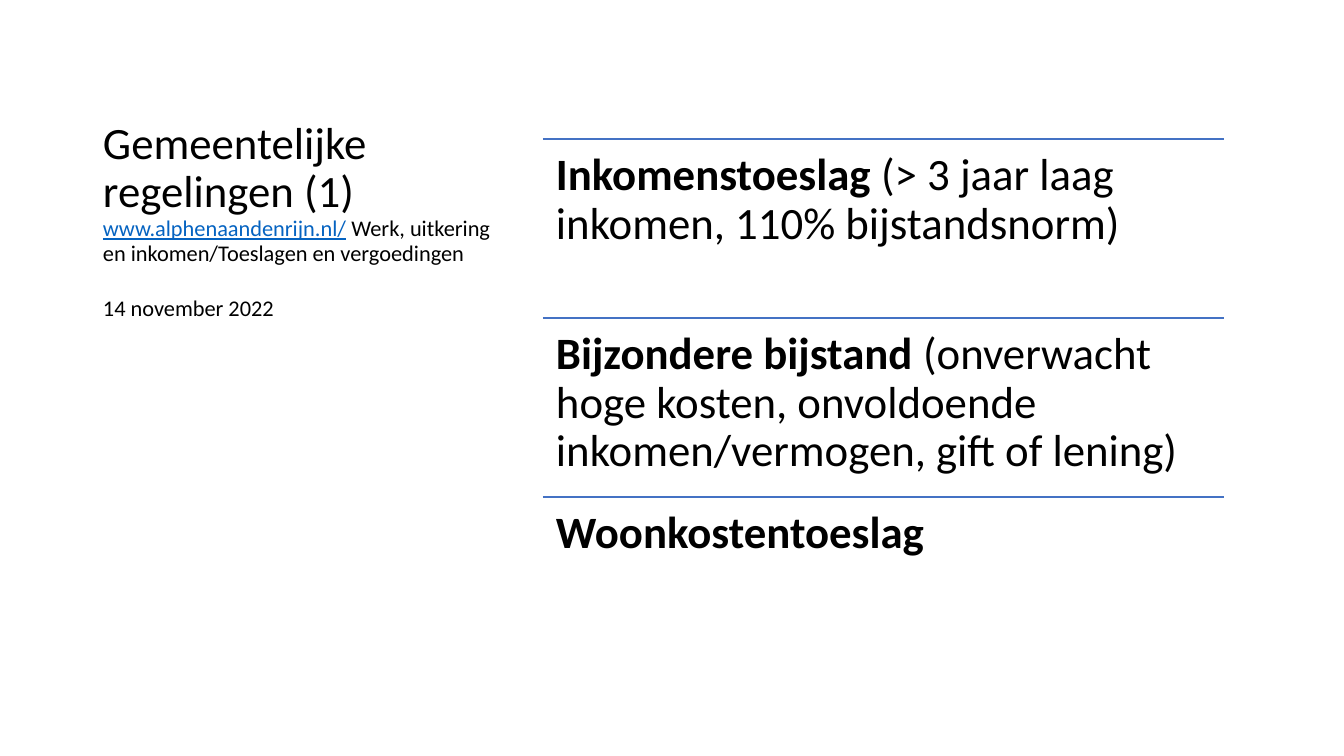
from pptx import Presentation
from pptx.dml.color import RGBColor
from pptx.enum.shapes import MSO_CONNECTOR
from pptx.enum.text import MSO_ANCHOR
from pptx.oxml.ns import qn
from pptx.util import Pt
from lxml import etree

STRAIGHT = MSO_CONNECTOR.STRAIGHT
TOP, BOTTOM = MSO_ANCHOR.TOP, MSO_ANCHOR.BOTTOM

BLACK = RGBColor(0x00, 0x00, 0x00)
BLUE = RGBColor(0x44, 0x72, 0xC4)
LINK = RGBColor(0x05, 0x63, 0xC1)
FONT = "Calibri"
SCALE = 914400 / 100.8

LEFT, WIDTH = 93, 433
ROW_X, ROW_Y, ROW_W, ROW_H = 543, 139, 681, 179
ROWS = [
    ("Inkomenstoeslag", " (> 3 jaar laag inkomen, 110% bijstandsnorm)"),
    ("Bijzondere bijstand ",
     "(onverwacht hoge kosten, onvoldoende inkomen/vermogen, gift of lening)"),
    ("Woonkostentoeslag", ""),
]


def px(n):
    return round(n * SCALE)


def add_box(slide, x, y, w, h, insets, anchor=TOP):
    """Add a text box with left, top, right, bottom insets; return its paragraph."""
    frame = slide.shapes.add_textbox(px(x), px(y), px(w), px(h)).text_frame
    frame.word_wrap = True
    frame.vertical_anchor = anchor
    (frame.margin_left, frame.margin_top,
     frame.margin_right, frame.margin_bottom) = map(px, insets)
    para = frame.paragraphs[0]
    para.line_spacing = 0.9
    return para


def add_run(para, text, size, color=BLACK, bold=False, line=False):
    run = para.add_run()
    run.text = text
    font = run.font
    font.name, font.size = FONT, Pt(size)
    font.bold, font.underline = bold, line
    font.color.rgb = color


def add_rule(slide, x, y, w):
    rule = slide.shapes.add_connector(STRAIGHT, px(x), px(y), px(x + w), px(y))
    rule.line.color.rgb = BLUE
    rule.line.width = Pt(1)
    etree.SubElement(rule._element.spPr, qn("a:effectLst"))


def add_row(slide, y, name, note):
    add_rule(slide, ROW_X, y, ROW_W)
    para = add_box(slide, ROW_X, y, ROW_W, ROW_H, (13, 13, 13, 13))
    add_run(para, name, 32, bold=True)
    if note:
        add_run(para, note, 32)


def add_title(slide):
    para = add_box(slide, LEFT, 50, WIDTH, 270, (10, 5, 10, 54), BOTTOM)
    add_run(para, "Gemeentelijke regelingen (1)", 32)
    para.add_line_break()
    add_run(para, "www.alphenaandenrijn.nl/", 16, LINK, line=True)
    add_run(para, " Werk, uitkering en inkomen/Toeslagen en vergoedingen", 16)


def add_date(slide):
    para = add_box(slide, LEFT, 227, WIDTH, 420, (10, 121, 10, 5))
    add_run(para, "14 november 2022", 16)


def main():
    deck = Presentation()
    deck.slide_width, deck.slide_height = px(1344), px(756)
    slide = deck.slides.add_slide(deck.slide_layouts[6])
    add_title(slide)
    for i, (name, note) in enumerate(ROWS):
        add_row(slide, ROW_Y + i * ROW_H, name, note)
    add_date(slide)
    deck.save("out.pptx")


if __name__ == "__main__":
    main()
